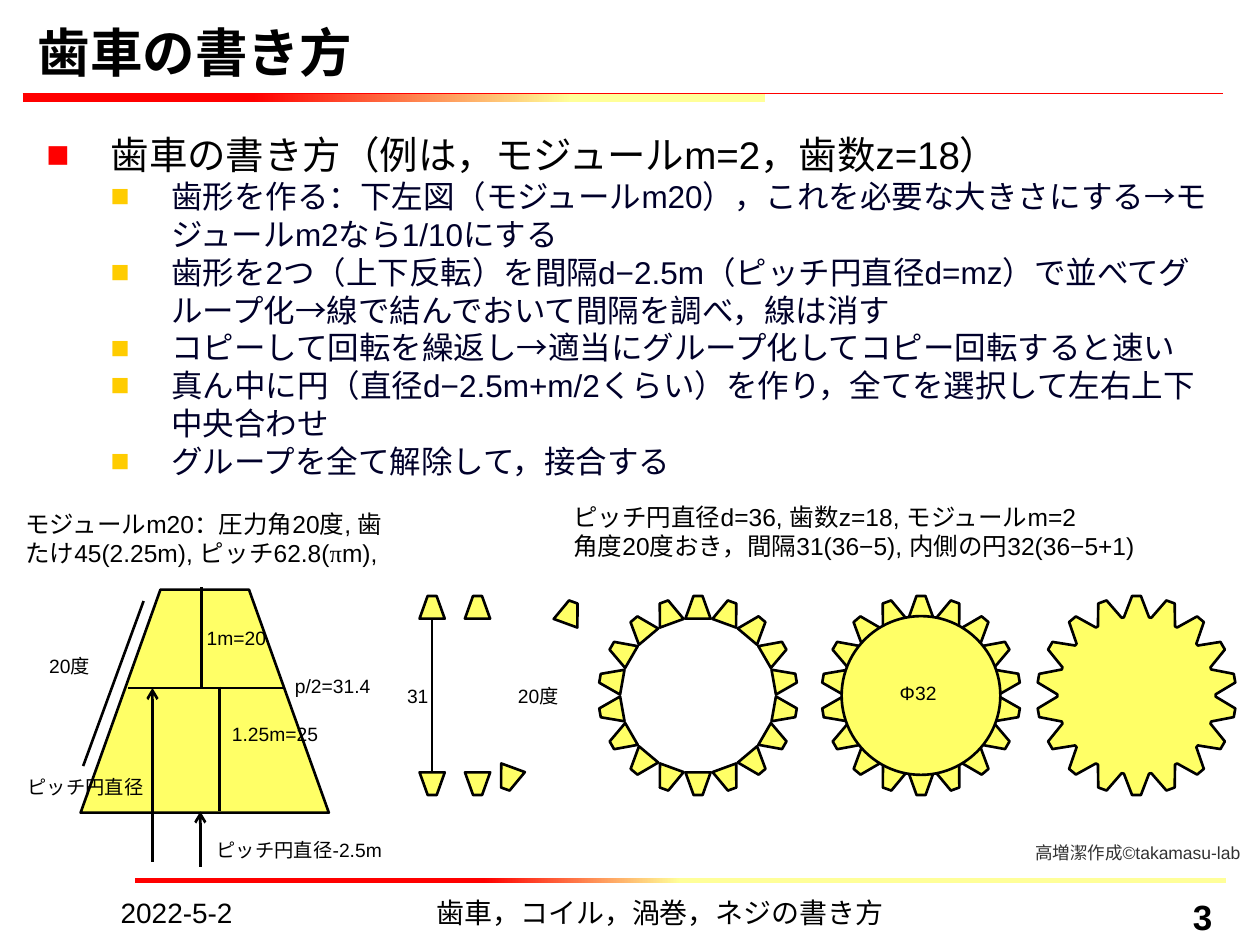
from dataclasses import dataclass
from math import cos, radians, sin
from typing import Optional

from lxml.etree import SubElement
from pptx import Presentation
from pptx.dml.color import RGBColor
from pptx.enum.shapes import MSO_CONNECTOR, MSO_SHAPE
from pptx.enum.text import MSO_ANCHOR, PP_ALIGN
from pptx.oxml.ns import qn
from pptx.util import Inches, Pt

COLORS = {
    "black": "000000", "navy": "00002A", "gray": "323232", "red": "FF0000",
    "pale": "FFFF99", "gear": "FFFF66", "gold": "FFCC00",
}
TOOTH_W, TOOTH_H, TOOTH_ADJ = 0.2, 0.18, 0.358
TEETH, TOOTH_RADIUS, GEAR_Y = 18, 0.7, 5.52
STEP = 360 // TEETH


@dataclass
class Label:
    x: float
    y: float
    w: float
    h: float
    lines: list
    size: float = 11
    color: str = "black"
    bold: bool = False
    align: PP_ALIGN = PP_ALIGN.LEFT
    anchor: MSO_ANCHOR = MSO_ANCHOR.TOP
    inset: float = 0.04


@dataclass
class Line:
    x1: float
    y1: float
    x2: float
    y2: float
    arrow: bool = False
    color: str = "black"
    width: float = 1.5


@dataclass
class Bullet:
    text: str
    level: int = 1


@dataclass
class Bar:
    x: float
    y: float
    w: float
    h: float
    red_end: float
    pale_start: float


def rgb(name: str) -> RGBColor:
    return RGBColor.from_string(COLORS[name])


def apply(obj, values: dict) -> None:
    for name, value in values.items():
        setattr(obj, name, value)


def style_font(font, size: float, color: str, bold: bool = False, name: str = "Arial") -> None:
    apply(font, {"size": Pt(size), "bold": bold, "name": name})
    font.color.rgb = rgb(color)


def text_frame(s, x: float, y: float, w: float, h: float, inset: Optional[float] = None):
    tf = s.shapes.add_textbox(Inches(x), Inches(y), Inches(w), Inches(h)).text_frame
    tf.word_wrap = True
    if inset is not None:
        sides = ("left", "top", "right", "bottom")
        apply(tf, {f"margin_{side}": Inches(inset) for side in sides})
    return tf


def add_label(s, label: Label) -> None:
    tf = text_frame(s, label.x, label.y, label.w, label.h, label.inset)
    tf.vertical_anchor = label.anchor
    for i, line in enumerate(label.lines):
        p = tf.paragraphs[0] if i == 0 else tf.add_paragraph()
        p.alignment = label.align
        for part in line.partition("π"):
            if part:
                r = p.add_run()
                r.text = part
                name = "Times New Roman" if part == "π" else "Arial"
                style_font(r.font, label.size, label.color, label.bold, name)


def add_bullets(s, bullets: list[Bullet]) -> None:
    levels = [(0.51, -0.51, "red", 22, "black"), (0.99, -0.48, "gold", 18, "navy")]
    tf = text_frame(s, 0.27, 0.99, 9.45, 5.91)
    for i, bullet in enumerate(bullets):
        left, indent, mark, size, color = levels[bullet.level]
        p = tf.paragraphs[0] if i == 0 else tf.add_paragraph()
        p.level = bullet.level
        pPr = p._p.get_or_add_pPr()
        pPr.set("marL", str(Inches(left)))
        pPr.set("indent", str(Inches(indent)))
        SubElement(SubElement(pPr, qn("a:buClr")), qn("a:srgbClr")).set("val", COLORS[mark])
        SubElement(pPr, qn("a:buFont")).set("typeface", "Arial")
        SubElement(pPr, qn("a:buChar")).set("char", "■")
        r = p.add_run()
        r.text = bullet.text
        style_font(r.font, size, color)


def add_line(shapes, line: Line) -> None:
    ends = [Inches(v) for v in (line.x1, line.y1, line.x2, line.y2)]
    c = shapes.add_connector(MSO_CONNECTOR.STRAIGHT, *ends)
    c.line.color.rgb = rgb(line.color)
    c.line.width = Pt(line.width)
    if line.arrow:
        SubElement(c.line._get_or_add_ln(), qn("a:tailEnd")).set("type", "arrow")
    SubElement(c._element.spPr, qn("a:effectLst"))


def paint_gear(sp) -> None:
    sp.shadow.inherit = False
    sp.fill.solid()
    sp.fill.fore_color.rgb = rgb("gear")
    sp.line.color.rgb = rgb("black")
    sp.line.width = Pt(1.5)


def add_shape(shapes, kind: MSO_SHAPE, x: float, y: float, w: float, h: float):
    sp = shapes.add_shape(kind, Inches(x), Inches(y), Inches(w), Inches(h))
    paint_gear(sp)
    return sp


def add_teeth(s, cx: float, angles: list[int]):
    group = s.shapes.add_group_shape()
    for angle in angles:
        x = cx + TOOTH_RADIUS * sin(radians(angle)) - TOOTH_W / 2
        y = GEAR_Y - TOOTH_RADIUS * cos(radians(angle)) - TOOTH_H / 2
        sp = add_shape(group.shapes, MSO_SHAPE.TRAPEZOID, x, y, TOOTH_W, TOOTH_H)
        sp.adjustments[0] = TOOTH_ADJ
        sp.rotation = angle
    return group


def add_gear(s, cx: float) -> None:
    tooth = [(-0.1, -0.62), (-0.035, -0.79), (0.035, -0.79), (0.1, -0.62)]
    points = []
    for k in range(TEETH):
        c, n = cos(radians(k * STEP)), sin(radians(k * STEP))
        points += [(Inches(cx + x * c - y * n), Inches(GEAR_Y + x * n + y * c)) for x, y in tooth]
    fb = s.shapes.build_freeform(*points[0])
    fb.add_line_segments(points[1:], close=True)
    paint_gear(fb.convert_to_shape())


def add_bar(s, bar: Bar) -> None:
    sp = add_shape(s.shapes, MSO_SHAPE.RECTANGLE, bar.x, bar.y, bar.w, bar.h)
    sp.line.fill.background()
    sp.fill.gradient()
    sp.fill.gradient_angle = 0
    stops = [(bar.red_end, "red"), (bar.pale_start, "pale")]
    for stop, (position, color) in zip(sp.fill.gradient_stops, stops):
        stop.position = position
        stop.color.rgb = rgb(color)


BARS = [Bar(1.07, 6.97, 8.66, 0.04, 0.32, 0.5), Bar(0.18, 0.74, 5.89, 0.07, 0.31, 0.74)]
BULLETS = [
    Bullet("歯車の書き方（例は，モジュールm=2，歯数z=18）", 0),
    Bullet("歯形を作る：下左図（モジュールm20），これを必要な大きさにする→モジュールm2なら1/10にする"),
    Bullet("歯形を2つ（上下反転）を間隔d−2.5m（ピッチ円直径d=mz）で並べてグループ化→線で結んでおいて間隔を調べ，線は消す"),
    Bullet("コピーして回転を繰返し→適当にグループ化してコピー回転すると速い"),
    Bullet("真ん中に円（直径d−2.5m+m/2くらい）を作り，全てを選択して左右上下中央合わせ"),
    Bullet("グループを全て解除して，接合する"),
]
LINES = [
    Line(0.18, 0.74, 9.71, 0.74, color="red", width=0.75),
    Line(3.43, 4.91, 3.43, 6.13),
    Line(1.14, 4.77, 0.66, 6.08),
    Line(1.02, 5.46, 2.25, 5.46),
    Line(1.6, 4.66, 1.6, 5.45),
    Line(1.74, 5.45, 1.74, 6.44),
    Line(1.21, 6.84, 1.21, 5.46, arrow=True),
    Line(1.59, 6.88, 1.59, 6.44, arrow=True),
]
LABELS = [
    Label(0.2, 0.21, 9.53, 0.5, ["歯車の書き方"], 30, bold=True, anchor=MSO_ANCHOR.BOTTOM, inset=None),
    Label(0.86, 7.06, 2.17, 0.29, ["2022-5-2"], 16, inset=None),
    Label(2.64, 7.06, 5.2, 0.29, ["歯車，コイル，渦巻，ネジの書き方"], 16, align=PP_ALIGN.CENTER, inset=None),
    Label(8.07, 7.06, 1.65, 0.29, ["3"], 20, bold=True, align=PP_ALIGN.RIGHT, inset=None),
    Label(4.51, 3.94, 4.88, 0.55,
          ["ピッチ円直径d=36, 歯数z=18, モジュールm=2", "角度20度おき，間隔31(36−5), 内側の円32(36−5+1)"], 14),
    Label(0.16, 4, 3.04, 0.55, ["モジュールm20：圧力角20度, 歯たけ45(2.25m), ピッチ62.8(πm),"], 14),
    Label(8.12, 6.63, 1.88, 0.27, ["高増潔作成©takamasu-lab"], 10, "gray", inset=None),
    Label(3.19, 5.39, 0.38, 0.26, ["31"]),
    Label(4.07, 5.39, 0.49, 0.26, ["20度"]),
    Label(7.1, 5.37, 0.38, 0.26, ["Φ32"]),
    Label(1.6, 4.93, 0.67, 0.26, ["1m=20"]),
    Label(1.8, 5.69, 0.98, 0.26, ["1.25m=25"]),
    Label(0.35, 5.15, 0.49, 0.26, ["20度"]),
    Label(2.3, 5.31, 0.79, 0.26, ["p/2=31.4"]),
    Label(0.18, 6.11, 1.11, 0.26, ["ピッチ円直径"]),
    Label(1.68, 6.61, 1.47, 0.26, ["ピッチ円直径-2.5m"]),
]


def main() -> None:
    prs = Presentation()
    apply(prs, {"slide_width": Inches(10), "slide_height": Inches(7.5)})
    s = prs.slides.add_slide(prs.slide_layouts[6])
    for bar in BARS:
        add_bar(s, bar)
    add_bullets(s, BULLETS)
    ring = list(range(0, 360, STEP))
    for cx, angles in [(3.43, [0, 180]), (3.79, [0, 180]), (4.28, [20, 200]), (5.54, ring)]:
        add_teeth(s, cx, angles)
    disc_gear = add_teeth(s, 7.31, ring)
    add_shape(disc_gear.shapes, MSO_SHAPE.OVAL, 6.68, 4.89, 1.26, 1.26)
    add_gear(s, 9.02)
    large_tooth = add_shape(s.shapes, MSO_SHAPE.TRAPEZOID, 0.64, 4.68, 1.97, 1.77)
    large_tooth.adjustments[0] = TOOTH_ADJ
    for line in LINES:
        add_line(s.shapes, line)
    for label in LABELS:
        add_label(s, label)
    prs.save("out.pptx")


if __name__ == "__main__":
    main()
